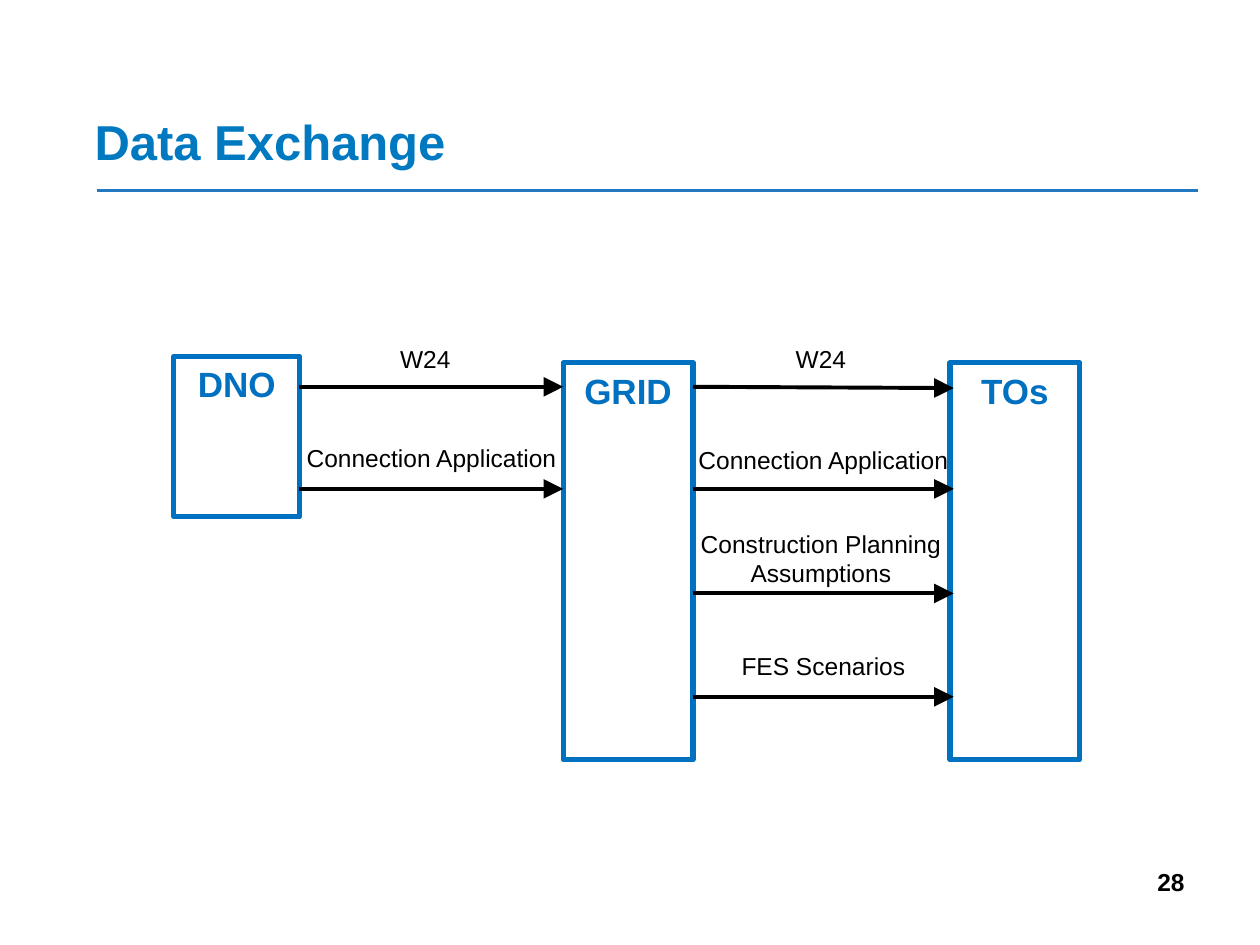
import pptx
import pptx.util
import pptx.dml.color
import pptx.enum.shapes
import pptx.enum.text
import pptx.oxml.ns
import lxml.etree

Inches = pptx.util.Inches
Pt = pptx.util.Pt
RGBColor = pptx.dml.color.RGBColor
ALIGN = pptx.enum.text.PP_ALIGN
ANCHOR = pptx.enum.text.MSO_ANCHOR

TITLE_BLUE = RGBColor(0x00, 0x79, 0xC1)
RULE_BLUE = RGBColor(0x24, 0x78, 0xC0)
PARTY_BLUE = RGBColor(0x00, 0x70, 0xC0)
BLACK = RGBColor(0, 0, 0)

# Parties: name, left, top, width, height
PARTIES = [
    ("GRID", 4.47, 2.88, 1.03, 3.15),
    ("DNO", 1.38, 2.83, 1, 1.27),
    ("TOs", 7.54, 2.88, 1.03, 3.15),
]

# Arrow columns (start x, end x) and rows (y)
DNO_TO_GRID = (2.37, 4.47)
GRID_TO_TOS = (5.5, 7.57)
W24_ROW, APPLICATION_ROW, PLANNING_ROW, SCENARIOS_ROW = 3.07, 3.88, 4.71, 5.53

# Exchanges: column, start y, end y
EXCHANGES = [
    (DNO_TO_GRID, W24_ROW, W24_ROW),
    (GRID_TO_TOS, W24_ROW, W24_ROW + 0.01),
    (DNO_TO_GRID, APPLICATION_ROW, APPLICATION_ROW),
    (GRID_TO_TOS, APPLICATION_ROW, APPLICATION_ROW),
    (GRID_TO_TOS, SCENARIOS_ROW, SCENARIOS_ROW),
    (GRID_TO_TOS, PLANNING_ROW, PLANNING_ROW),
]

# Labels: text, left, top, width, height, wraps
LABELS = [
    ("W24", 3.07, 2.68, 0.61, 0.34, False),
    ("Connection Application", 2.33, 3.47, 2.19, 0.34, False),
    ("Connection Application", 5.44, 3.48, 2.19, 0.34, False),
    ("W24", 6.21, 2.68, 0.61, 0.34, False),
    ("Construction Planning Assumptions", 5.32, 4.15, 2.39, 0.57, True),
    ("FES Scenarios", 5.34, 5.12, 2.39, 0.34, True),
]


def write(frame, text, size, color, align, bold=False):
    paragraph = frame.paragraphs[0]
    paragraph.text = text
    paragraph.alignment = align
    font = paragraph.font
    font.name, font.size, font.bold = "Arial", Pt(size), bold
    font.color.rgb = color


def add_line(slide, start, end, color, width, arrow=False):
    line = slide.shapes.add_connector(
        pptx.enum.shapes.MSO_CONNECTOR.STRAIGHT,
        *(Inches(value) for value in start + end))
    line.line.color.rgb = color
    line.line.width = Pt(width)
    qn = pptx.oxml.ns.qn
    if arrow:
        lxml.etree.SubElement(line.line._get_or_add_ln(), qn("a:tailEnd"),
                              type="triangle", w="lg", len="lg")
    lxml.etree.SubElement(line._element.spPr, qn("a:effectLst"))


def add_party(slide, name, *box):
    party = slide.shapes.add_shape(
        pptx.enum.shapes.MSO_SHAPE.RECTANGLE, *map(Inches, box))
    party.shadow.inherit = False
    party.fill.background()
    party.line.color.rgb = PARTY_BLUE
    party.line.width = Pt(3)
    party.text_frame.vertical_anchor = ANCHOR.TOP
    write(party.text_frame, name, 20, PARTY_BLUE, ALIGN.CENTER, bold=True)


def add_label(slide, text, left, top, width, height, wraps,
              align=ALIGN.CENTER, bold=False):
    label = slide.shapes.add_textbox(*map(Inches, (left, top, width, height)))
    label.text_frame.word_wrap = wraps
    write(label.text_frame, text, 14, BLACK, align, bold)


def set_title(slide, text):
    title = slide.shapes.title
    title.left, title.top, title.width, title.height = map(
        Inches, (0.65, 0.83, 8.85, 0.57))
    title.text_frame.vertical_anchor = ANCHOR.BOTTOM
    write(title.text_frame, text, 28, TITLE_BLUE, ALIGN.LEFT, bold=True)


def main():
    deck = pptx.Presentation()
    deck.slide_width, deck.slide_height = Inches(10), Inches(7.5)
    slide = deck.slides.add_slide(deck.slide_layouts.get_by_name("Title Only"))

    # Heading and page number
    add_line(slide, (0.77, 1.51), (9.51, 1.51), RULE_BLUE, 1.5)
    set_title(slide, "Data Exchange")
    add_label(slide, "28", 7.17, 6.83, 2.33, 0.52, True, ALIGN.RIGHT, bold=True)

    # Parties and the data passed between them
    for party in PARTIES:
        add_party(slide, *party)
    for (start, end), start_y, end_y in EXCHANGES:
        add_line(slide, (start, start_y), (end, end_y), BLACK, 2.25, arrow=True)
    for label in LABELS:
        add_label(slide, *label)

    deck.save("out.pptx")


if __name__ == "__main__":
    main()
